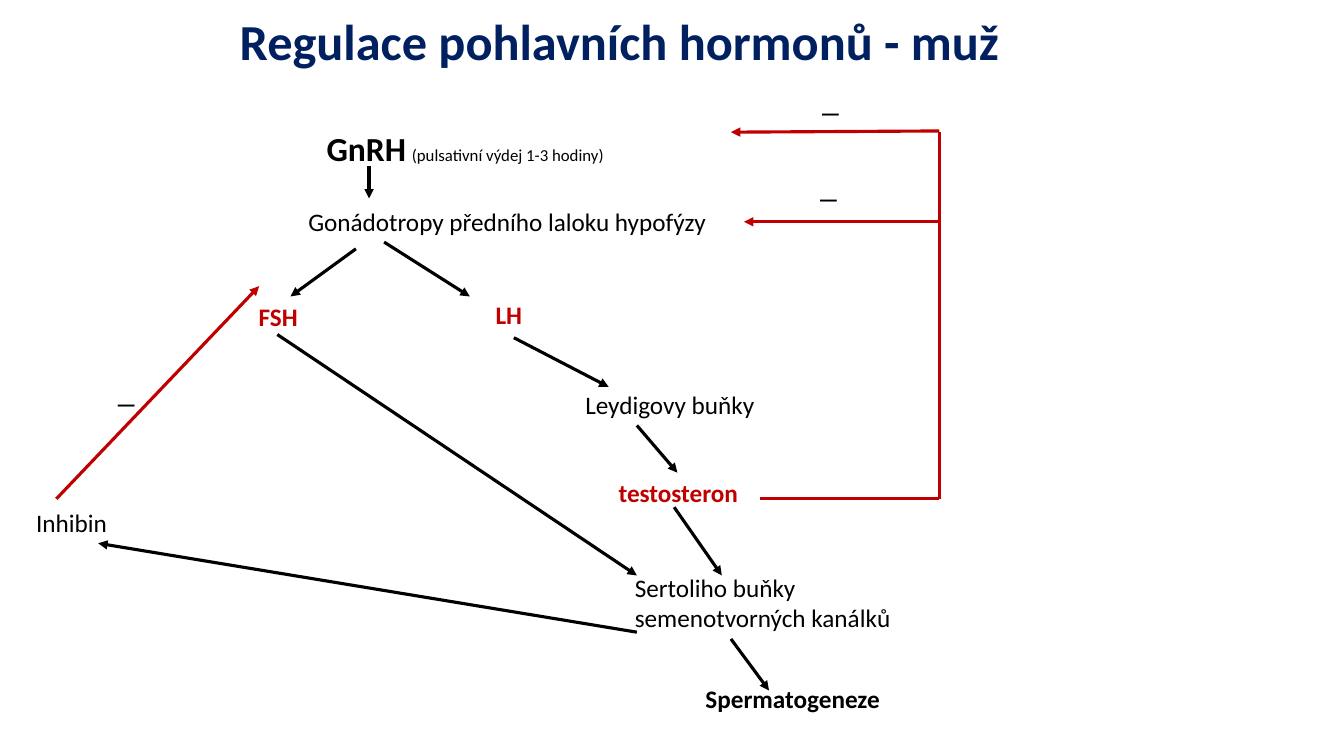
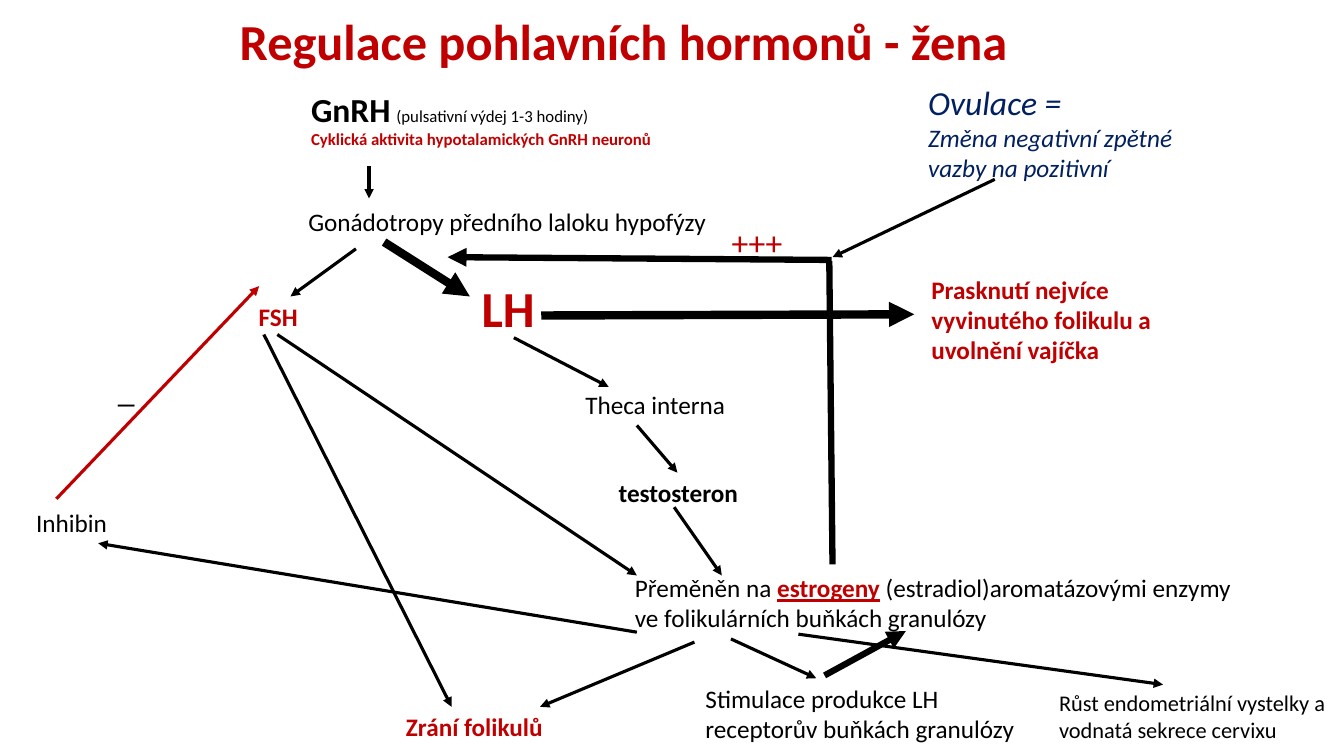
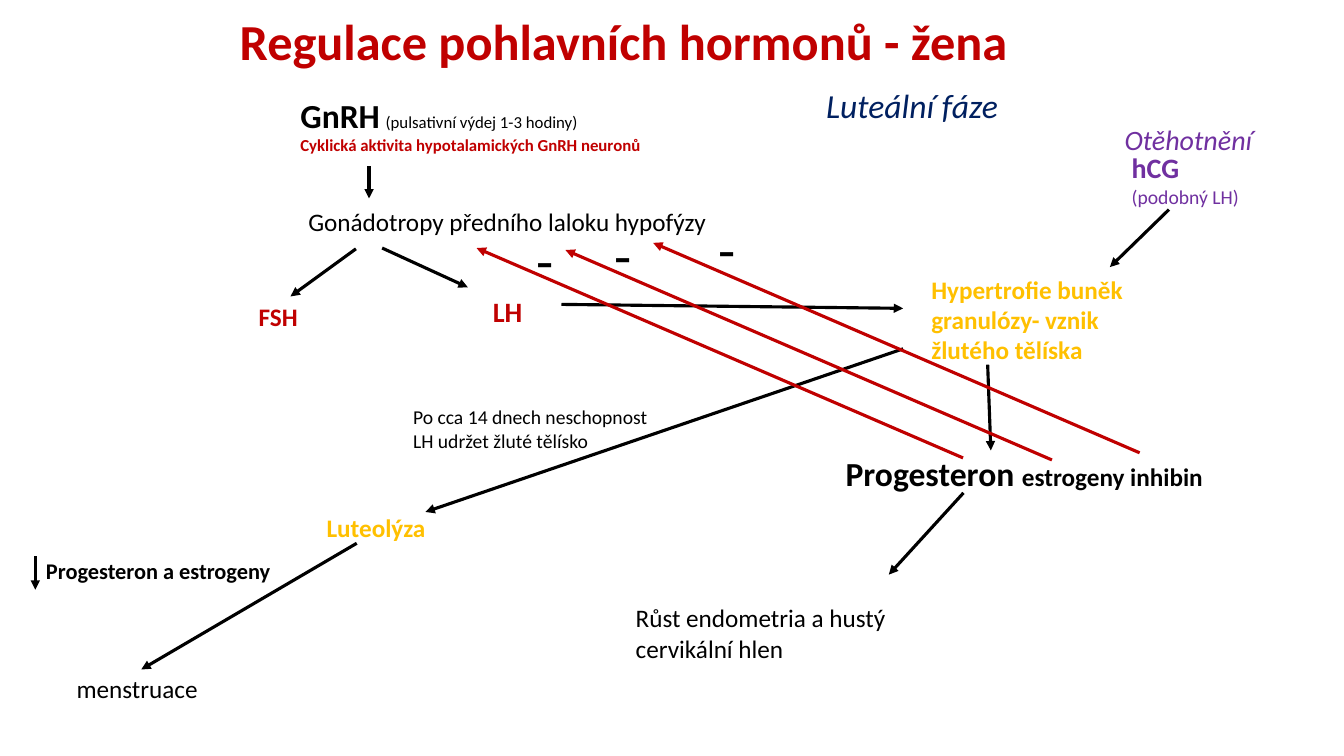
from lxml.etree import SubElement
from pptx import Presentation
from pptx.dml.color import RGBColor
from pptx.enum.shapes import MSO_CONNECTOR
from pptx.enum.text import MSO_ANCHOR, MSO_AUTO_SIZE
from pptx.oxml.ns import qn
from pptx.util import Cm, Pt

FONT = "Calibri"
BLACK, RED, NAVY, GOLD, PURPLE = "000000", "C00000", "002060", "FFC000", "7030A0"
TITLE_BOX = (5.79, 0, 28.07, 2.24)
JOIN_TOLERANCE = 0.03


# Content builders: a label is (box, paragraphs), a paragraph is a list of runs
def run(text, size=18, color=BLACK, style=""):
    return text, size, color, style


def label(box, text, size=18, color=BLACK, style=""):
    return box, [[run(text, size, color, style)]]


def arrow(x1, y1, x2, y2, color=BLACK, width=2.25, head=True):
    return (x1, y1), (x2, y2), color, width, head


def sign(left, top, text="_", color=BLACK):
    return label((left, top, 1.9, 1.27), text, 24, color)


def minus(left, top):
    return label((left, top, 1.4, 1.96), "-", 40)


GNRH = [run("GnRH", 24, style="b"), run(" "), run("(pulsativní výdej 1-3 hodiny)", 12)]
CYCLIC = [run("Cyklická aktivita hypotalamických GnRH neuronů", 12, RED, "b")]
RUPTURE_BOX = (23.22, 6.78, 6.1, 2.57)

# Parts found on all slides
PITUITARY_LABELS = [
    label((7.52, 5.08, 12.22, 1.02), "Gonádotropy předního laloku hypofýzy"),
    label((6.27, 7.47, 3.38, 1.02), "FSH", 18, RED, "b"),
]
PITUITARY_ARROWS = [
    arrow(9.3, 4.19, 9.3, 5),         # GnRH to pituitary
    arrow(8.97, 6.27, 7.32, 7.47),    # pituitary to FSH
]


# Gonadal cascade, found on the first two slides
def cascade_labels(lh_cells, testosterone_color):
    return [
        label((14.5, 9.68, 5.16, 1.02), lh_cells),
        label((15.34, 11.91, 5.23, 1.02), "testosteron", 18, testosterone_color, "b"),
        label((0.66, 12.67, 3.63, 1.02), "Inhibin"),
        sign(2.72, 9.17),
    ]


CASCADE_ARROWS = [
    arrow(12.95, 8.51, 15.34, 9.75),      # LH to its cells
    arrow(16.05, 10.72, 17.07, 11.91),    # cells to testosterone
    arrow(16.99, 12.78, 18.19, 14.5),     # testosterone onwards
    arrow(6.99, 8.43, 16.05, 14.5),       # FSH to its cells
    arrow(16.05, 15.93, 2.47, 13.69),     # cells to inhibin
    arrow(1.42, 12.57, 6.53, 7.21, RED),  # inhibin back to FSH
]

MALE = {
    "title": ("Regulace pohlavních hormonů - muž", NAVY),
    "labels": PITUITARY_LABELS + cascade_labels("Leydigovy buňky", RED) + [
        ((7.98, 3.1, 7.7, 1.27), [GNRH]),
        label((12.24, 7.42, 4.52, 1.02), "LH", 18, RED, "b"),
        label((15.75, 14.3, 7.29, 1.8), "Sertoliho buňky semenotvorných kanálků"),
        label((17.53, 17.09, 8.94, 1.02), "Spermatogeneze", style="b"),
        sign(20.42, 4.01),
        sign(20.47, 1.85),
    ],
    "arrows": PITUITARY_ARROWS + CASCADE_ARROWS + [
        arrow(9.68, 6.1, 11.84, 7.47),
        arrow(18.42, 16.1, 19.38, 17.4),
        # Testosterone feedback
        arrow(19.15, 12.57, 23.67, 12.57, RED, head=False),
        arrow(23.67, 12.57, 23.67, 3.33, RED, head=False),
        arrow(23.67, 3.3, 18.42, 3.33, RED),
        arrow(23.67, 5.59, 18.75, 5.59, RED),
    ],
}

OVULATION = {
    "title": ("Regulace pohlavních hormonů - žena", RED),
    "labels": PITUITARY_LABELS + cascade_labels("Theca interna", BLACK) + [
        ((7.59, 2.11, 10.74, 1.8), [GNRH, CYCLIC]),
        label((11.89, 6.86, 4.52, 1.8), "LH", 36, RED, "b"),
        ((15.75, 14.3, 16.18, 1.8), [[
            run("Přeměněn na "),
            run("estrogeny", 18, RED, "bu"),
            run(" (estradiol)aromatázovými enzymy ve folikulárních buňkách granulózy"),
        ]]),
        label((17.53, 17.09, 8.61, 1.8), "Stimulace produkce LH receptorův buňkách granulózy"),
        label((9.98, 17.81, 7.26, 1.02), "Zrání folikulů", 18, RED, "b"),
        ((23.14, 1.93, 7.39, 2.82), [
            [run("Ovulace =", 24, NAVY, "i")],
            [run("Změna negativní zpětné vazby na pozitivní", 18, NAVY, "i")],
        ]),
        label((26.44, 17.25, 7.47, 1.63),
              "Růst endometriální vystelky a vodnatá sekrece cervixu", 16),
        sign(18.19, 5.46, "+++", RED),
        label(RUPTURE_BOX, "Prasknutí nejvíce vyvinutého folikulu a uvolnění vajíčka",
              18, RED, "b"),
    ],
    "arrows": PITUITARY_ARROWS + CASCADE_ARROWS + [
        arrow(9.68, 6.1, 11.84, 7.47, width=6),
        arrow(18.42, 16.1, 20.57, 17.09),
        arrow(17.5, 16.18, 13.61, 17.81),
        arrow(6.65, 8.43, 11.38, 17.81),
        arrow(20.12, 15.98, 29.31, 17.25),
        # Positive feedback of estrogens
        arrow(20.98, 14.22, 20.9, 6.58, width=4.5, head=False),
        arrow(20.96, 6.55, 11.28, 6.48, width=4.5),
        arrow(20.78, 17.02, 22.83, 15.9, width=4.5),
        arrow(25.07, 4.52, 20.98, 6.48),
        arrow(13.64, 7.95, 23.04, 7.92, width=6),
    ],
}

LUTEAL = {
    "title": ("Regulace pohlavních hormonů - žena", RED),
    "labels": PITUITARY_LABELS + [
        ((7.32, 2.26, 9.75, 1.8), [GNRH, CYCLIC]),
        label((12.17, 7.29, 4.52, 1.12), "LH", 20, RED, "b"),
        ((21.06, 11.28, 12.55, 1.27), [[
            run("Progesteron ", 24, style="b"), run("estrogeny inhibin", style="b"),
        ]]),
        label((20.57, 2.01, 7.39, 1.27), "Luteální fáze", 24, NAVY, "i"),
        label(RUPTURE_BOX, "Hypertrofie buněk granulózy- vznik žlutého tělíska",
              18, GOLD, "b"),
        label((15.77, 15.06, 8.51, 1.8), "Růst endometria a hustý cervikální hlen"),
        label((10.16, 10.08, 6.88, 1.45),
              "Po cca 14 dnech neschopnost LH udržet žluté tělísko", 14),
        label((7.98, 12.78, 4.04, 1.02), "Luteolýza", 18, GOLD, "b"),
        label((0.91, 13.92, 9.42, 0.94), "Progesteron a estrogeny", 16, style="b"),
        label((1.68, 16.84, 6.48, 1.02), "menstruace"),
        ((28.27, 3.68, 4.52, 1.7), [
            [run("hCG", 20, PURPLE, "b")],
            [run("(podobný LH)", 14, PURPLE)],
        ]),
        label((28.09, 2.95, 5.7, 1.12), "Otěhotnění", 20, PURPLE, "i"),
        minus(13.26, 5.56),
        minus(15.24, 5.44),
        minus(17.86, 5.28),
    ],
    "arrows": PITUITARY_ARROWS + [
        arrow(9.63, 6.25, 11.79, 7.24),
        arrow(14.15, 7.67, 22.76, 7.77),
        arrow(24.89, 9.19, 24.97, 11.35),
        arrow(24.28, 12.42, 22.4, 14.48),
        arrow(22.76, 8.79, 10.72, 12.9),
        arrow(8.99, 13.69, 3.56, 16.87),
        arrow(0.89, 14.02, 0.89, 14.86),
        arrow(29.46, 5.28, 27.97, 6.73),
    ] + [
        # Parallel negative feedbacks
        arrow(x + 12.26, y + 5.29, x, y, RED)
        for x, y in [(12.01, 6.25), (14.25, 6.3), (16.46, 6.12)]
    ],
}


def rgb(color):
    return RGBColor.from_string(color)


def set_font(font, size, color, style):
    font.name = FONT
    font.size = Pt(size)
    font.color.rgb = rgb(color)
    font.bold = "b" in style
    font.italic = "i" in style
    font.underline = "u" in style


def add_label(slide, box, paragraphs):
    text_box = slide.shapes.add_textbox(*map(Cm, box))
    frame = text_box.text_frame
    frame.word_wrap = True
    frame.auto_size = MSO_AUTO_SIZE.SHAPE_TO_FIT_TEXT
    for number, runs in enumerate(paragraphs):
        paragraph = frame.add_paragraph() if number else frame.paragraphs[0]
        for text, *look in runs:
            piece = paragraph.add_run()
            piece.text = text
            set_font(paragraph.font if len(runs) == 1 else piece.font, *look)
    return text_box


def add_title(slide, text, color):
    frame = add_label(slide, *label(TITLE_BOX, text, 36, color, "b")).text_frame
    frame.auto_size = MSO_AUTO_SIZE.NONE
    frame.vertical_anchor = MSO_ANCHOR.MIDDLE
    frame.paragraphs[0].line_spacing = 0.9


def find_side(point, boxes):
    """Return the (text box, side number) whose middle lies at the point."""
    for text_box, (left, top, width, height) in boxes:
        middles = [(left + width / 2, top), (left, top + height / 2),
                   (left + width / 2, top + height), (left + width, top + height / 2)]
        for side, (x, y) in enumerate(middles):
            if max(abs(x - point[0]), abs(y - point[1])) <= JOIN_TOLERANCE:
                return text_box, side
    return None


def add_arrow(slide, boxes, start, end, color, width, head):
    link = slide.shapes.add_connector(MSO_CONNECTOR.STRAIGHT, *map(Cm, start + end))
    link.line.color.rgb = rgb(color)
    link.line.width = Pt(width)
    if head:
        SubElement(link.line._get_or_add_ln(), qn("a:tailEnd"), type="triangle")
    SubElement(link._element.spPr, qn("a:effectLst"))
    for point, connect in ((start, link.begin_connect), (end, link.end_connect)):
        joint = find_side(point, boxes)
        if joint:
            connect(*joint)


def main():
    deck = Presentation()
    deck.slide_width, deck.slide_height = Cm(33.87), Cm(19.05)
    for content in (MALE, OVULATION, LUTEAL):
        slide = deck.slides.add_slide(deck.slide_layouts[6])
        add_title(slide, *content["title"])
        boxes = [(add_label(slide, box, paragraphs), box)
                 for box, paragraphs in content["labels"]]
        for parts in content["arrows"]:
            add_arrow(slide, boxes, *parts)
    deck.save("out.pptx")


if __name__ == "__main__":
    main()
